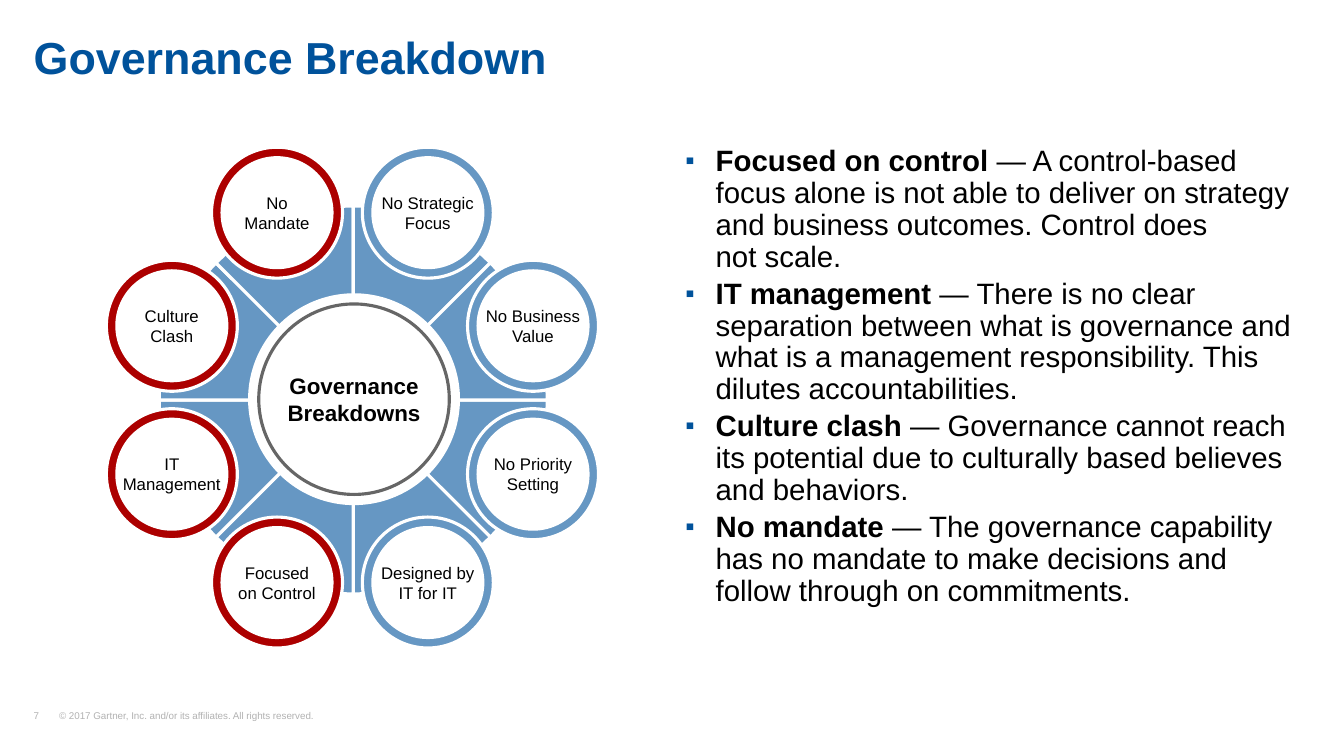
from copy import deepcopy
from dataclasses import dataclass
from math import cos, pi, sin

from lxml.etree import SubElement
from pptx import Presentation
from pptx.dml.color import RGBColor as RGB
from pptx.enum.shapes import MSO_SHAPE as SHAPE
from pptx.enum.text import MSO_ANCHOR as ANCHOR, PP_ALIGN as ALIGN
from pptx.oxml.ns import qn
from pptx.util import Cm, Pt


@dataclass(frozen=True)
class Theme:
    font: str = "Arial"
    navy: str = "00529B"
    blue: str = "6697C3"
    red: str = "AC0000"
    gray: str = "666666"
    pale: str = "B2B2B2"
    black: str = "000000"
    white: str = "FFFFFF"
    title: float = 32
    body: float = 21
    hub: float = 16
    label: float = 12
    footer: float = 7
    outline: float = 2.25


theme = Theme()


def style_paragraph(p, size, color, bold=False):
    """Format every run, and give line breaks the format of the last run."""
    for r in p.runs:
        r.font.name = theme.font
        r.font.size = Pt(size)
        r.font.bold = bold
        r.font.color.rgb = RGB.from_string(color)
    for br in p._p.findall(qn("a:br")):
        br.insert(0, deepcopy(p.runs[-1]._r.rPr))


def paint(sp, fill, line):
    """Set fill and outline; a fill of None leaves the shape open."""
    sp.shadow.inherit = False
    if fill:
        sp.fill.solid()
        sp.fill.fore_color.rgb = RGB.from_string(fill)
    else:
        sp.fill.background()
    sp.line.color.rgb = RGB.from_string(line)
    sp.line.width = Pt(theme.outline)


prs = Presentation()
prs.slide_width, prs.slide_height = Cm(33.86), Cm(19.05)
s = prs.slides.add_slide(prs.slide_layouts[6])

# Text boxes: left, top, width, height, top inset, right inset
FRAMES = {
    "footer": (0.85, 17.91, 8.2, 0.28, 0, 0),
    "body": (17.27, 3.69, 15.72, 12.65, 0, 0.13),
    "title": (0.85, 0.64, 32.16, 1.5, 0.25, 0),
}
frames = {}
for name, (x, y, w, h, top, right) in FRAMES.items():
    box = s.shapes.add_textbox(Cm(x), Cm(y), Cm(w), Cm(h))
    tf = frames[name] = box.text_frame
    tf.word_wrap = True
    tf.margin_left = tf.margin_bottom = 0
    tf.margin_top, tf.margin_right = Cm(top), Cm(right)

# Title
p = frames["title"].paragraphs[0]
p.text = "Governance Breakdown"
p.line_spacing = 0.9
style_paragraph(p, theme.title, theme.navy, True)

# Footer
frames["footer"].vertical_anchor = ANCHOR.BOTTOM
p = frames["footer"].paragraphs[0]
p.text = "7\t© 2017 Gartner, Inc. and/or its affiliates. All rights reserved."
tabs = SubElement(p._p.get_or_add_pPr(), qn("a:tabLst"))
SubElement(tabs, qn("a:tab"), pos=str(Cm(0.64)), algn="l")
p.line_spacing = 0.9
p.space_after = Pt(6)
style_paragraph(p, theme.footer, theme.pale)

# Bulleted explanations
BULLETS = [
    ("Focused on control ", "— A control-based focus alone is not able to deliver "
     "on strategy and business outcomes. Control does\vnot scale."),
    ("IT management ", "— There is no clear separation between what is governance "
     "and what is a management responsibility. This dilutes accountabilities."),
    ("Culture clash ", "— Governance cannot reach its potential due to culturally "
     "based believes and behaviors."),
    ("No mandate ", "— The governance capability has no mandate to make decisions "
     "and follow through on commitments."),
]
tf = frames["body"]
for i, (lead, detail) in enumerate(BULLETS):
    p = tf.add_paragraph() if i else tf.paragraphs[0]
    pPr = p._p.get_or_add_pPr()
    pPr.set("marL", str(Cm(0.76)))
    pPr.set("indent", str(-Cm(0.76)))
    SubElement(SubElement(pPr, qn("a:buClr")), qn("a:srgbClr"), val=theme.navy)
    SubElement(pPr, qn("a:buSzPct"), val="90000")
    SubElement(pPr, qn("a:buFont"), typeface=theme.font)
    SubElement(pPr, qn("a:buChar"), char="▪")
    p.line_spacing = 0.9
    p.space_after = Pt(4)
    p.add_run().text = lead
    for n, part in enumerate(detail.split("\v")):
        if n:
            p.add_line_break()
        p.add_run().text = part
    style_paragraph(p, theme.body, theme.black)
    p.runs[0].font.bold = True

# Eight wedges around the hub
CX, CY, RADIUS = 8.9, 10.08, 4.89
WEDGES, ARC_STEPS = 8, 12
for i in range(WEDGES):
    angles = [2 * pi * (i + n / ARC_STEPS) / WEDGES for n in range(ARC_STEPS + 1)]
    arc = [(Cm(CX + RADIUS * cos(a)), Cm(CY + RADIUS * sin(a))) for a in angles]
    outline = s.shapes.build_freeform(Cm(CX), Cm(CY))
    outline.add_line_segments(arc, close=True)
    paint(outline.convert_to_shape(), theme.blue, theme.white)

# Discs: centre, diameter, fill, line, label, type size
DX_NEAR, DX_FAR, DY_NEAR = 1.9, 4.55, 1.87
DY_TOP, DY_BOTTOM = -4.72, 4.6
RIM, FACE = 3.3, 2.77
FACTORS = [
    (DX_NEAR, DY_TOP, theme.blue, "No Strategic\vFocus"),
    (DX_FAR, -DY_NEAR, theme.blue, "No Business\vValue"),
    (DX_FAR, DY_NEAR, theme.blue, "No Priority\vSetting"),
    (DX_NEAR, DY_BOTTOM, theme.blue, "Designed by\vIT for IT"),
    (-DX_NEAR, DY_BOTTOM, theme.red, "Focused\von Control"),
    (-DX_FAR, DY_NEAR, theme.red, "IT\vManagement"),
    (-DX_FAR, -DY_NEAR, theme.red, "Culture\vClash"),
    (-DX_NEAR, DY_TOP, theme.red, "No\vMandate"),
]
discs = []
for dx, dy, color, label in FACTORS:
    center = CX - 0.02 + dx, CY + dy
    discs.append((*center, RIM, color, theme.white, "", theme.label))
    discs.append((*center, FACE, theme.white, theme.white, label, theme.label))
hub = CX + 0.02, CY - 0.02
discs.append((*hub, 5.26, theme.white, theme.white,
              "Governance\vBreakdowns", theme.hub))
discs.append((*hub, 4.8, None, theme.gray, "", theme.hub))

for x, y, d, fill, line, label, size in discs:
    sp = s.shapes.add_shape(SHAPE.OVAL, Cm(x - d / 2), Cm(y - d / 2), Cm(d), Cm(d))
    paint(sp, fill, line)
    if label:
        tf = sp.text_frame
        tf.word_wrap = False
        tf.vertical_anchor = ANCHOR.MIDDLE
        tf.margin_left = tf.margin_right = tf.margin_top = tf.margin_bottom = 0
        p = tf.paragraphs[0]
        p.text = label
        p.alignment = ALIGN.CENTER
        style_paragraph(p, size, theme.black, size == theme.hub)

prs.save("out.pptx")
